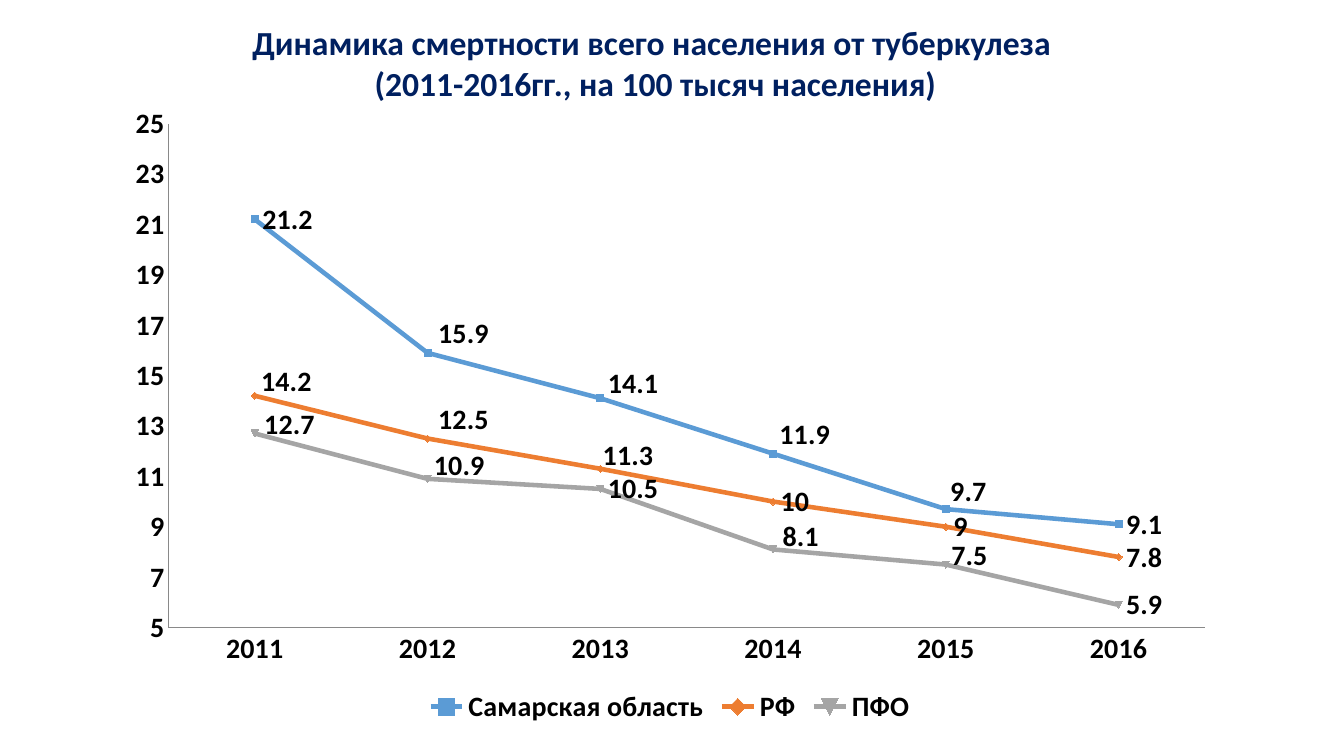
from dataclasses import dataclass

from lxml import etree
from pptx import Presentation
from pptx import util as u
from pptx.chart.data import CategoryChartData
from pptx.dml.color import RGBColor
from pptx.enum import chart as ch
from pptx.enum import text
from pptx.oxml.ns import qn

HEADING = [
    "Динамика смертности всего населения от туберкулеза ",
    "(2011-2016гг., на 100 тысяч населения)",
]
YEARS = ["2011", "2012", "2013", "2014", "2015", "2016"]
MORTALITY = {
    "Самарская область": [21.2, 15.9, 14.1, 11.9, 9.7, 9.1],
    "РФ": [14.2, 12.5, 11.3, 10, 9, 7.8],
    "ПФО": [12.7, 10.9, 10.5, 8.1, 7.5, 5.9],
}
LABEL_SHIFTS_CM = {
    "Самарская область": {1: (0.08, -0.5), 2: (0, -0.38), 3: (-0.03, -0.48), 4: (-0.08, -0.45)},
    "РФ": {0: (-0.03, -0.35), 1: (0.08, -0.48), 2: (-0.13, -0.33)},
    "ПФО": {0: (0.05, -0.23), 1: (-0.03, -0.33), 3: (0.05, -0.33), 4: (-0.05, -0.23)},
}
CHART_BOX = (2.84, 2.31, 28.09, 16.08)
PLOT_AREA = {"x": 0.05, "y": 0.05, "w": 0.93, "h": 0.79}


@dataclass(frozen=True)
class Theme:
    font: str = "Calibri"
    heading: str = "002060"
    ink: str = "000000"
    axis: str = "898989"
    regions: tuple = ("5B9BD5", "ED7D31", "A5A5A5")
    heading_size: int = 24
    chart_size: int = 20


THEME = Theme()


def style_font(font, size, color):
    font.name = THEME.font
    font.size = u.Pt(size)
    font.bold = True
    font.color.rgb = RGBColor.from_string(color)


def manual_layout(settings):
    layout = etree.Element(qn("c:layout"))
    manual = etree.SubElement(layout, qn("c:manualLayout"))
    for tag, value in settings.items():
        etree.SubElement(manual, qn(f"c:{tag}")).set("val", str(value))
    return layout


def add_heading(slide):
    heading = slide.shapes.title
    heading.left, heading.top = u.Cm(4.72), u.Cm(0)
    heading.width, heading.height = u.Cm(23.6), u.Cm(3.15)
    frame = heading.text_frame
    frame.text = "\n".join(HEADING)
    frame.vertical_anchor = text.MSO_ANCHOR.MIDDLE
    for line in frame.paragraphs:
        line.alignment = text.PP_ALIGN.CENTER
        line.line_spacing = 1
        line.space_before = u.Pt(0)
        style_font(line.runs[0].font, THEME.heading_size, THEME.heading)


def style_axes(chart):
    for axis in (chart.category_axis, chart.value_axis):
        axis.has_major_gridlines = False
        axis.major_tick_mark = axis.minor_tick_mark = ch.XL_TICK_MARK.NONE
        axis.format.line.color.rgb = RGBColor.from_string(THEME.axis)
        axis.format.line.width = u.Pt(0.75)
        style_font(axis.tick_labels.font, THEME.chart_size, THEME.ink)
    rates = chart.value_axis
    rates.minimum_scale, rates.maximum_scale, rates.major_unit = 5, 25, 2


def style_region(region, color):
    rgb = RGBColor.from_string(color)
    region.smooth = False
    region.format.line.color.rgb = rgb
    region.format.line.width = u.Pt(3.25)
    region.marker.size = 5
    region.marker.format.fill.solid()
    region.marker.format.fill.fore_color.rgb = rgb
    region.marker.format.line.color.rgb = rgb

    labels = region.data_labels
    labels.show_value = True
    labels.position = ch.XL_LABEL_POSITION.RIGHT
    style_font(labels.font, THEME.chart_size, THEME.ink)
    for index, (dx, dy) in LABEL_SHIFTS_CM[region.name].items():
        label = region.points[index].data_label
        label.position = ch.XL_LABEL_POSITION.RIGHT
        style_font(label.font, THEME.chart_size, THEME.ink)
    for entry in region.data_labels._element.findall(qn("c:dLbl")):
        index = entry.find(qn("c:idx"))
        dx, dy = LABEL_SHIFTS_CM[region.name][int(index.get("val"))]
        shift = {"x": round(dx / CHART_BOX[2], 4), "y": round(dy / CHART_BOX[3], 4)}
        index.addnext(manual_layout(shift))


def add_mortality_chart(slide):
    data = CategoryChartData(number_format="General")
    data.categories = YEARS
    for name, rates in MORTALITY.items():
        data.add_series(name, rates)
    chart = slide.shapes.add_chart(
        ch.XL_CHART_TYPE.LINE_MARKERS, *map(u.Cm, CHART_BOX), data
    ).chart
    chart.has_title = False
    style_font(chart.font, THEME.chart_size, THEME.ink)
    style_axes(chart)

    chart.has_legend = True
    chart.legend.position = ch.XL_LEGEND_POSITION.BOTTOM
    chart.legend.include_in_layout = False
    style_font(chart.legend.font, THEME.chart_size, THEME.ink)

    lines = chart.plots[0]
    lines.vary_by_categories = False
    for region, color in zip(lines.series, THEME.regions):
        style_region(region, color)

    plot_area = chart._chartSpace.chart.plotArea
    for layout in plot_area.findall(qn("c:layout")):
        plot_area.remove(layout)
    modes = {"layoutTarget": "inner", "xMode": "edge", "yMode": "edge"}
    plot_area.insert(0, manual_layout({**modes, **PLOT_AREA}))


def main():
    deck = Presentation()
    deck.slide_width, deck.slide_height = u.Cm(33.87), u.Cm(19.05)
    slide = deck.slides.add_slide(deck.slide_layouts[5])
    add_heading(slide)
    add_mortality_chart(slide)
    deck.save("out.pptx")


if __name__ == "__main__":
    main()
